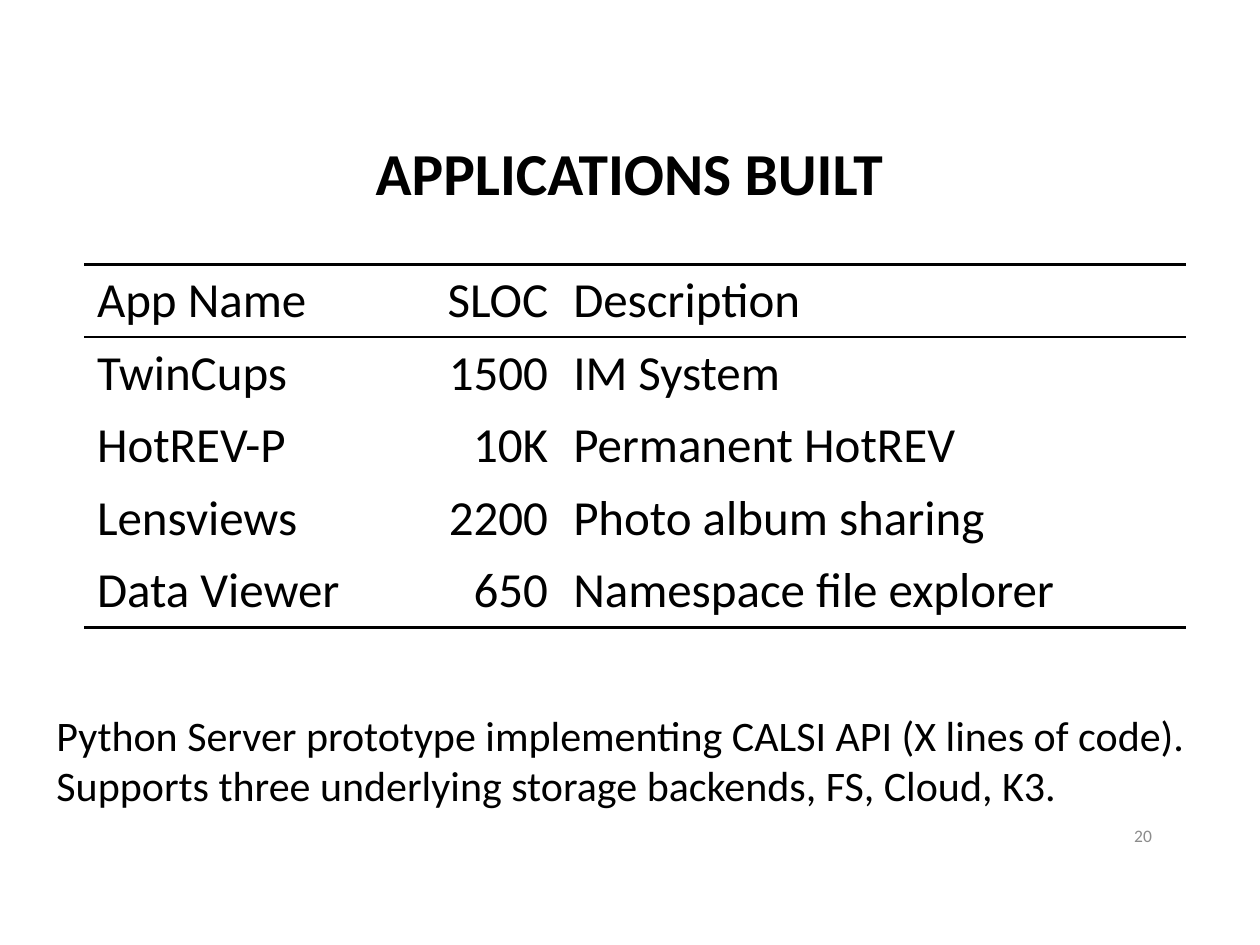
"""Build the slide that lists the applications built."""
from pptx import Presentation
from pptx.dml.color import RGBColor
from pptx.enum.text import MSO_ANCHOR as Anchor, MSO_AUTO_SIZE as AutoSize, PP_ALIGN as Align
from pptx.oxml import parse_xml
from pptx.oxml.ns import nsdecls
from pptx.util import Inches, Pt

BLACK = RGBColor(0x00, 0x00, 0x00)
GRAY = RGBColor(0x8C, 0x8C, 0x8C)
FONT = "Calibri"
WIDTH, HEIGHT = 10, 7.5

TABLE_ROWS = [
    ("App Name", "SLOC", "Description"),
    ("TwinCups", "1500", "IM System"),
    ("HotREV-P", "10K", "Permanent HotREV"),
    ("Lensviews", "2200", "Photo album sharing"),
    ("Data Viewer", "650", "Namespace file explorer"),
]
COLUMNS = [(2.44, Align.LEFT), (1.34, Align.RIGHT), (4.96, Align.LEFT)]
TABLE_LEFT, TABLE_TOP, ROW_HEIGHT = 0.67, 2.1, 0.57
LAST_ROW = len(TABLE_ROWS) - 1
SIDES = ("lnL", "lnR", "lnT", "lnB")
BORDERS = {
    0: {"lnT": 2.25, "lnB": 1},
    1: {"lnT": 1},
    LAST_ROW: {"lnB": 2.25},
}

TEXTS = [
    {"text": "APPLICATIONS BUILT", "box": (0.75, 0.67, 8.49, 1.45),
     "frame": {"word_wrap": True, "vertical_anchor": Anchor.MIDDLE},
     "paragraph": {"alignment": Align.CENTER, "line_spacing": 0.9},
     "font": {"size": Pt(34), "bold": True}, "color": BLACK},
    {"text": "20", "box": (8.62, 6.43, 0.62, 0.4),
     "frame": {"word_wrap": True, "vertical_anchor": Anchor.MIDDLE},
     "paragraph": {"alignment": Align.RIGHT},
     "font": {"size": Pt(10)}, "color": GRAY},
    {"text": "Python Server prototype implementing CALSI API (X lines of code).\n"
             "Supports three underlying storage backends, FS, Cloud, K3.",
     "box": (0.35, 5.58, 9.27, 0.91),
     "frame": {"word_wrap": False, "auto_size": AutoSize.SHAPE_TO_FIT_TEXT},
     "paragraph": {"alignment": Align.LEFT},
     "font": {"size": Pt(24)}, "color": BLACK},
]


def set_attributes(target, values):
    for name, value in values.items():
        setattr(target, name, value)


def write(text_frame, text, paragraph_format, font_format, color):
    paragraph = text_frame.paragraphs[0]
    paragraph.text = text
    set_attributes(paragraph, paragraph_format)
    for run in paragraph.runs:
        set_attributes(run.font, {"name": FONT, **font_format})
        run.font.color.rgb = color


def add_text(slide, item):
    text_frame = slide.shapes.add_textbox(*map(Inches, item["box"])).text_frame
    set_attributes(text_frame, item["frame"])
    write(text_frame, item["text"], item["paragraph"], item["font"], item["color"])


def add_borders(cell, borders):
    properties = cell._tc.get_or_add_tcPr()
    solid = f'<a:solidFill><a:srgbClr val="{BLACK}"/></a:solidFill>'
    for index, side in enumerate(SIDES):
        width = borders.get(side, 0)
        fill = solid if width else "<a:noFill/>"
        properties.insert(index, parse_xml(
            f'<a:{side} {nsdecls("a")} w="{Pt(width)}">{fill}</a:{side}>'))


def add_app_table(slide):
    size = sum(width for width, _ in COLUMNS), ROW_HEIGHT * len(TABLE_ROWS)
    table = slide.shapes.add_table(
        len(TABLE_ROWS), len(COLUMNS),
        *map(Inches, (TABLE_LEFT, TABLE_TOP, *size))).table
    set_attributes(table, {"first_row": False, "horz_banding": False})
    for column, (width, _) in zip(table.columns, COLUMNS):
        column.width = Inches(width)
    for row_index, row in enumerate(TABLE_ROWS):
        for column_index, text in enumerate(row):
            cell = table.cell(row_index, column_index)
            cell.fill.background()
            alignment = COLUMNS[column_index][1]
            write(cell.text_frame, text, {"alignment": alignment},
                  {"size": Pt(28)}, BLACK)
            add_borders(cell, BORDERS.get(row_index, {}))


def main():
    presentation = Presentation()
    set_attributes(presentation, {"slide_width": Inches(WIDTH),
                                  "slide_height": Inches(HEIGHT)})
    slide = presentation.slides.add_slide(presentation.slide_layouts[6])
    add_app_table(slide)
    for item in TEXTS:
        add_text(slide, item)
    presentation.save("out.pptx")


if __name__ == "__main__":
    main()
